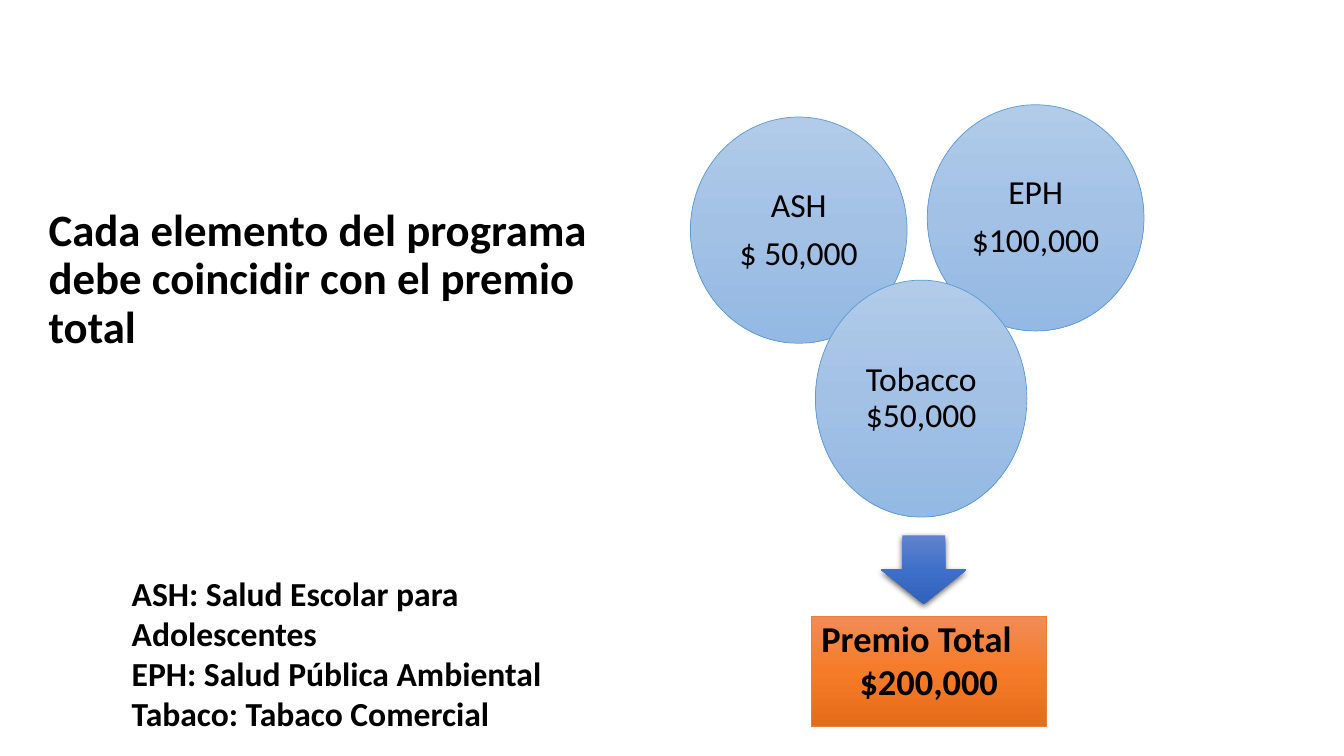
from copy import deepcopy

from lxml.etree import SubElement
from pptx import Presentation
from pptx.dml.color import RGBColor
from pptx.enum.shapes import MSO_SHAPE as Shape
from pptx.enum.text import MSO_ANCHOR as Anchor, MSO_AUTO_SIZE as AutoSize, PP_ALIGN as Align
from pptx.oxml.ns import qn
from pptx.util import Cm, Pt

BLACK = RGBColor(0x00, 0x00, 0x00)
CIRCLE_LINE = RGBColor(0x5B, 0x9B, 0xD5)
TOTAL_LINE = RGBColor(0xED, 0x7D, 0x31)
CIRCLE_FILL = [RGBColor(0xB1, 0xCB, 0xE9), RGBColor(0xA3, 0xC1, 0xE5), RGBColor(0x93, 0xB9, 0xE4)]
ARROW_FILL = [RGBColor(0x61, 0x83, 0xCB), RGBColor(0x3E, 0x70, 0xCA), RGBColor(0x30, 0x62, 0xBB)]
TOTAL_FILL = [RGBColor(0xF1, 0x8C, 0x57), RGBColor(0xF6, 0x7B, 0x28), RGBColor(0xE5, 0x6C, 0x19)]


def set_attributes(target, values):
    for name, value in values.items():
        setattr(target, name, value)


def write_lines(frame, lines, size, bold=False, **para_format):
    """Put each line in a paragraph of its own, all formatted alike."""
    for index, line in enumerate(lines):
        para = frame.add_paragraph() if index else frame.paragraphs[0]
        set_attributes(para, para_format)
        span = para.add_run()
        span.text = line
        set_attributes(span.font, {"name": "Calibri", "size": Pt(size), "bold": bold})
        span.font.color.rgb = BLACK


def add_gradient_shape(shapes, kind, box, colors, line_color=None):
    """Add a shape shaded from top to bottom through three colours."""
    shape = shapes.add_shape(kind, *map(Cm, box))
    shape.shadow.inherit = False
    shape.fill.gradient()
    shape.fill.gradient_angle = 270
    stop_list = shape.fill._xPr.find(qn("a:gradFill")).find(qn("a:gsLst"))
    stop_list.insert(1, deepcopy(stop_list[0]))
    for stop, color, position in zip(shape.fill.gradient_stops, colors, (0, 0.5, 1)):
        stop.color.rgb = color
        stop.position = position
    if line_color is None:
        shape.line.fill.background()
    else:
        shape.line.color.rgb = line_color
        shape.line.width = Pt(0.5)
    return shape


def add_drop_shadow(shape):
    effects = shape._element.spPr.find(qn("a:effectLst"))
    shadow = SubElement(effects, qn("a:outerShdw"), blurRad=str(Pt(4.5)), dist=str(Pt(1.5)),
                        dir="5400000", algn="ctr", rotWithShape="0")
    color = SubElement(shadow, qn("a:srgbClr"), val=str(BLACK))
    SubElement(color, qn("a:alpha"), val="63000")


def place_title(page, box):
    title = page.shapes.title
    set_attributes(title, dict(zip(("left", "top", "width", "height"), map(Cm, box))))
    set_attributes(title.text_frame, {"word_wrap": True, "auto_size": AutoSize.NONE,
                                      "vertical_anchor": Anchor.BOTTOM, "margin_bottom": Cm(1.8)})
    write_lines(title.text_frame, ["Cada elemento del programa debe coincidir con el premio total"],
                32, True, alignment=Align.LEFT, line_spacing=0.9)


def add_funnel(page, box):
    """Group the three program circles with the arrow that leads to the total."""
    left, top = box
    group = page.shapes.add_group_shape()
    arrow = add_gradient_shape(group.shapes, Shape.DOWN_ARROW,
                               (left + 4.8, top + 10.85, 2.16, 1.73), ARROW_FILL)
    add_drop_shadow(arrow)
    circles = [
        (["ASH", "$ 50,000"], 0, 0.31, 5.46, 5.7),
        (["EPH", "$100,000"], 5.97, 0, 5.46, 5.7),
        (["Tobacco $50,000"], 3.15, 4.42, 5.33, 5.97),
    ]
    for lines, across, down, width, height in circles:
        circle = add_gradient_shape(group.shapes, Shape.OVAL,
                                    (left + across, top + down, width, height),
                                    CIRCLE_FILL, CIRCLE_LINE)
        set_attributes(circle.text_frame, {"word_wrap": True, "vertical_anchor": Anchor.MIDDLE,
                                           "margin_left": 0, "margin_right": 0,
                                           "margin_top": 0, "margin_bottom": 0})
        write_lines(circle.text_frame, lines, 24, alignment=Align.CENTER,
                    line_spacing=0.9, space_after=Pt(8.4))


def add_total(page, box):
    total = add_gradient_shape(page.shapes, Shape.RECTANGLE, box, TOTAL_FILL, TOTAL_LINE)
    frame = total.text_frame
    set_attributes(frame, {"word_wrap": True, "vertical_anchor": Anchor.TOP, "margin_top": 0})
    write_lines(frame, ["Premio Total", "$200,000"], 26, True, alignment=Align.CENTER)
    frame.paragraphs[0].alignment = Align.LEFT


def add_legend(page, box):
    legend = page.shapes.add_textbox(*map(Cm, box))
    set_attributes(legend.text_frame, {"word_wrap": True, "auto_size": AutoSize.SHAPE_TO_FIT_TEXT})
    write_lines(legend.text_frame, ["ASH: Salud Escolar para Adolescentes",
                                    "EPH: Salud Pública Ambiental Tabaco: Tabaco Comercial"], 24, True)


def main():
    deck = Presentation()
    set_attributes(deck, {"slide_width": Cm(33.87), "slide_height": Cm(19.05)})
    page = deck.slides.add_slide(deck.slide_layouts.get_by_name("Title Only"))
    place_title(page, (0.97, 3.25, 15.09, 7.44))
    add_funnel(page, (17.4, 2.64))
    add_total(page, (20.45, 15.52, 5.92, 2.79))
    add_legend(page, (3.07, 14.3, 12.27, 4.37))
    deck.save("out.pptx")


if __name__ == "__main__":
    main()
